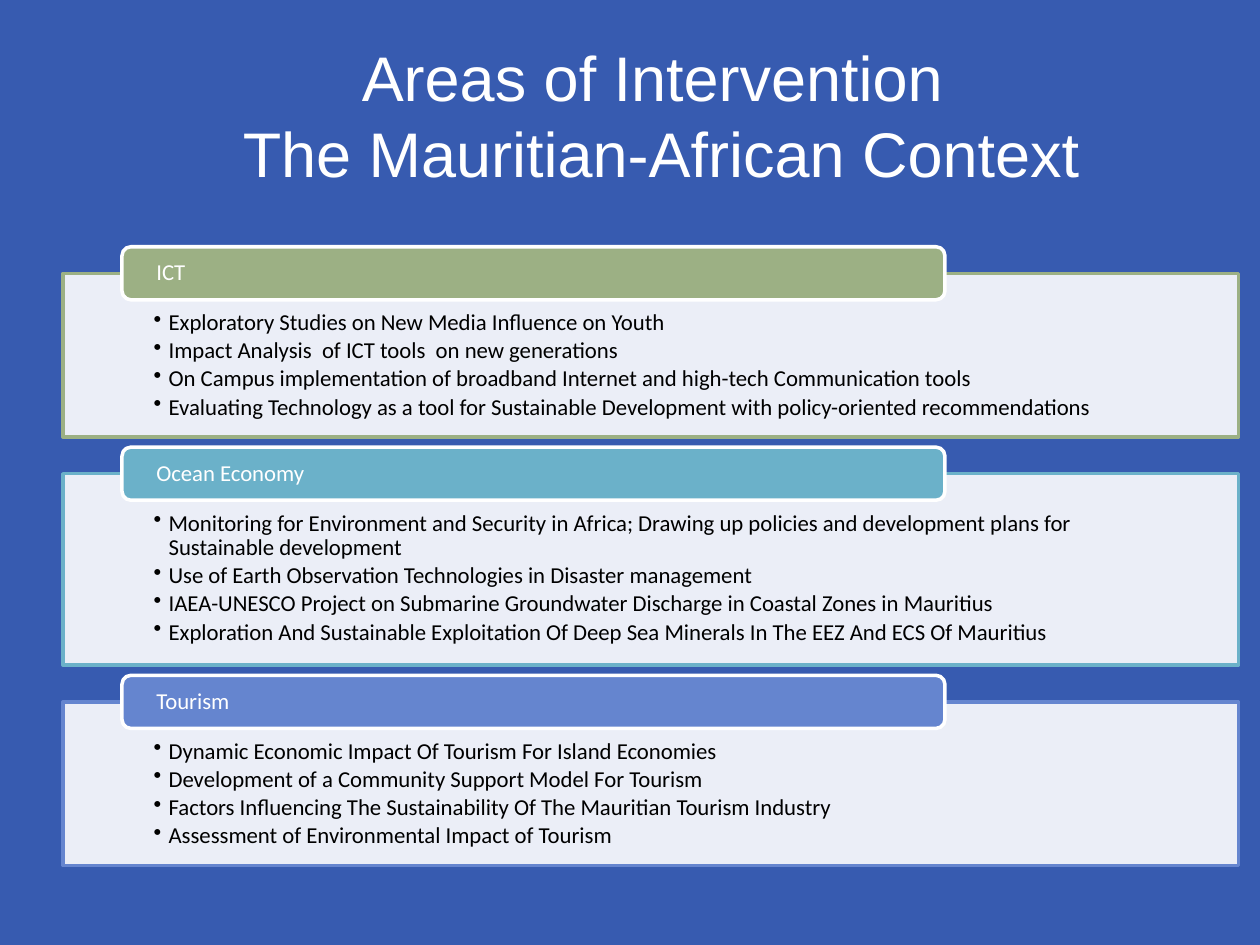
from dataclasses import dataclass

from lxml.etree import SubElement
from pptx import Presentation
from pptx.dml.color import RGBColor
from pptx.enum.shapes import MSO_SHAPE as Shape
from pptx.enum.text import MSO_ANCHOR as Anchor, PP_ALIGN as Align
from pptx.oxml.ns import qn
from pptx.util import Cm, Pt


@dataclass(frozen=True)
class Theme:
    background: str = "375BB0"
    white: str = "FFFFFF"
    black: str = "000000"
    green: str = "9CB084"
    teal: str = "6BB1C9"
    blue: str = "6585CF"
    title_font: str = "Arial"
    body_font: str = "Calibri"
    title_size: int = 36
    body_size: int = 13
    outline: int = 2


THEME = Theme()
PANEL_LEFT, PANEL_WIDTH = 1.27, 23.7
FIRST_PANEL_TOP, PANEL_GAP = 5.51, 0.74
TAB_LEFT, TAB_WIDTH, TAB_HEIGHT = 2.46, 16.59, 1.07
TAB_RISE = TAB_HEIGHT / 2
BULLET_INDENT = 0.3

# Name, accent colour, panel height, points
AREAS = [
    ("ICT", THEME.green, 3.3, [
        "Exploratory Studies on New Media Influence on Youth",
        "Impact Analysis  of ICT tools  on new generations",
        "On Campus implementation of broadband Internet and high-tech Communication tools",
        "Evaluating Technology as a tool for Sustainable Development with policy-oriented recommendations",
    ]),
    ("Ocean Economy", THEME.teal, 3.86, [
        "Monitoring for Environment and Security in Africa; Drawing up policies and development plans for Sustainable development",
        "Use of Earth Observation Technologies in Disaster management",
        "IAEA-UNESCO Project on Submarine Groundwater Discharge in Coastal Zones in Mauritius",
        "Exploration And Sustainable Exploitation Of Deep Sea Minerals In The EEZ And ECS Of Mauritius",
    ]),
    ("Tourism", THEME.blue, 3.3, [
        "Dynamic Economic Impact Of Tourism For Island Economies",
        "Development of a Community Support Model For Tourism",
        "Factors Influencing The Sustainability Of The Mauritian Tourism Industry",
        "Assessment of Environmental Impact of Tourism",
    ]),
]


def color(value):
    return RGBColor.from_string(value)


def add_bullet(para):
    props = para._p.get_or_add_pPr()
    props.set("marL", str(Cm(BULLET_INDENT)))
    props.set("indent", str(-Cm(BULLET_INDENT)))
    SubElement(props, qn("a:buChar")).set("char", "•")


def write_text(box, lines, *, font=THEME.body_font, size=THEME.body_size,
               ink=THEME.black, align=Align.LEFT, anchor=Anchor.TOP,
               insets=(0.25, 0.13, 0.25, 0.13), line_spacing=0.9,
               space_after=0, bullets=False):
    """Fill a shape with one paragraph per line; insets run left, top, right, bottom."""
    frame = box.text_frame
    frame.word_wrap = True
    frame.vertical_anchor = anchor
    (frame.margin_left, frame.margin_top,
     frame.margin_right, frame.margin_bottom) = map(Cm, insets)
    for index, line in enumerate(lines):
        para = frame.add_paragraph() if index else frame.paragraphs[0]
        para.text = line
        para.alignment = align
        para.line_spacing = line_spacing
        para.space_after = Pt(space_after)
        if bullets:
            add_bullet(para)
        for span in para.runs:
            span.font.name = font
            span.font.size = Pt(size)
            span.font.color.rgb = color(ink)


def add_block(page, kind, left, top, width, height, fill, line, opacity=100):
    block = page.shapes.add_shape(kind, Cm(left), Cm(top), Cm(width), Cm(height))
    block.shadow.inherit = False
    block.fill.solid()
    block.fill.fore_color.rgb = color(fill)
    if opacity < 100:
        tint = block.fill._xPr.find(".//" + qn("a:srgbClr"))
        SubElement(tint, qn("a:alpha")).set("val", str(opacity * 1000))
    block.line.color.rgb = color(line)
    block.line.width = Pt(THEME.outline)
    return block


def add_title(page, text):
    box = page.shapes.add_textbox(Cm(1.9), Cm(0.71), Cm(22.86), Cm(3.18))
    write_text(box, [text], font=THEME.title_font, size=THEME.title_size,
               ink=THEME.white, align=Align.CENTER, anchor=Anchor.MIDDLE,
               line_spacing=1.0)


def add_area(page, top, name, accent, height, points):
    """Draw a bulleted panel with its name tab straddling the upper edge."""
    panel = add_block(page, Shape.RECTANGLE, PANEL_LEFT, top, PANEL_WIDTH, height,
                      THEME.white, accent, opacity=90)
    write_text(panel, points, insets=(1.83, 0.76, 1.83, 0.25),
               space_after=2, bullets=True)
    tab = add_block(page, Shape.ROUNDED_RECTANGLE, TAB_LEFT, top - TAB_RISE,
                    TAB_WIDTH, TAB_HEIGHT, accent, THEME.white)
    write_text(tab, [name], ink=THEME.white, anchor=Anchor.MIDDLE,
               insets=(0.64, 0, 0.64, 0))


def main():
    deck = Presentation()
    deck.slide_width, deck.slide_height = Cm(25.4), Cm(19.05)
    page = deck.slides.add_slide(deck.slide_layouts[6])
    page.background.fill.solid()
    page.background.fill.fore_color.rgb = color(THEME.background)

    top = FIRST_PANEL_TOP
    for name, accent, height, points in AREAS:
        add_area(page, top, name, accent, height, points)
        top += height + PANEL_GAP
    add_title(page, "Areas of Intervention \vThe Mauritian-African Context")
    deck.save("out.pptx")


if __name__ == "__main__":
    main()
